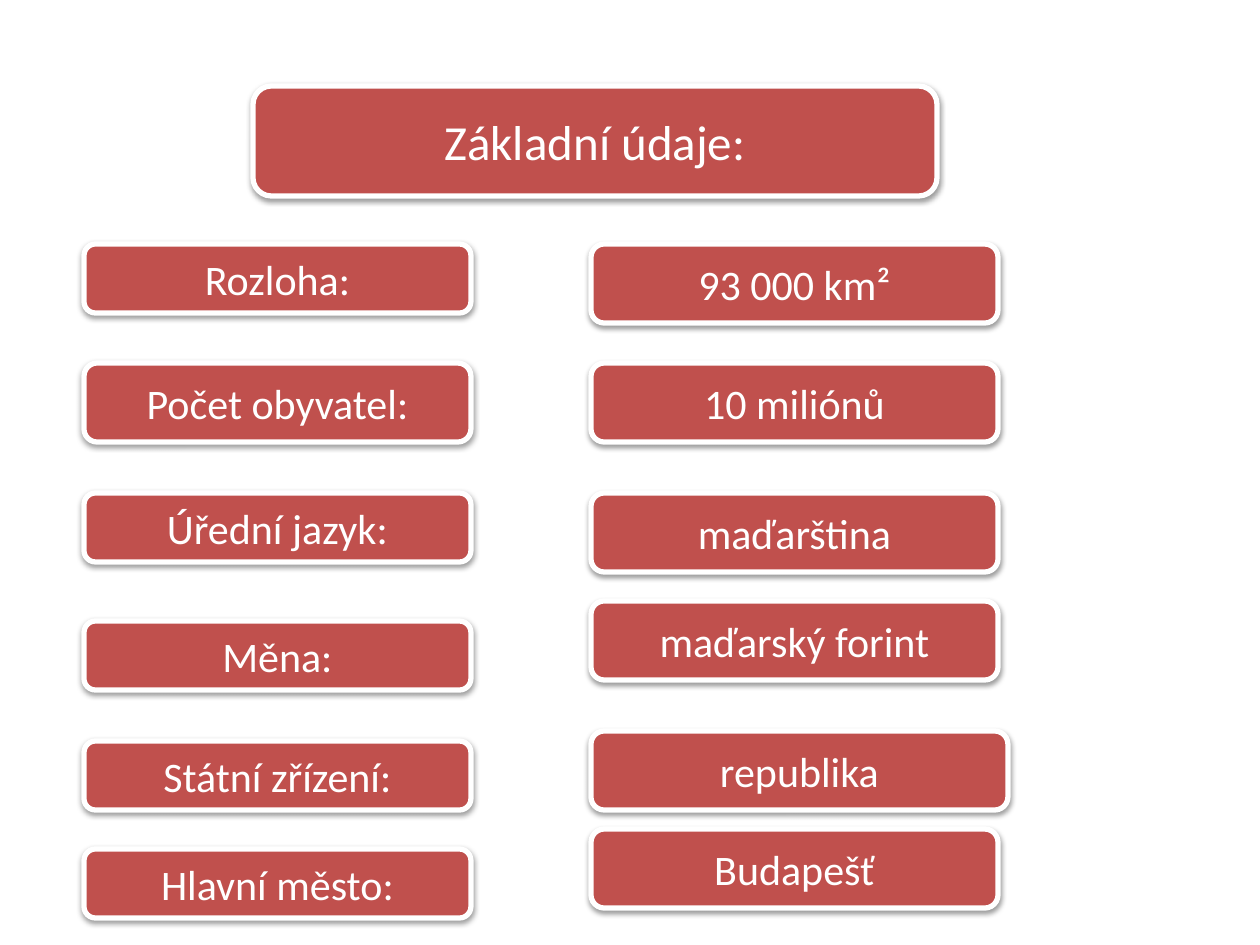
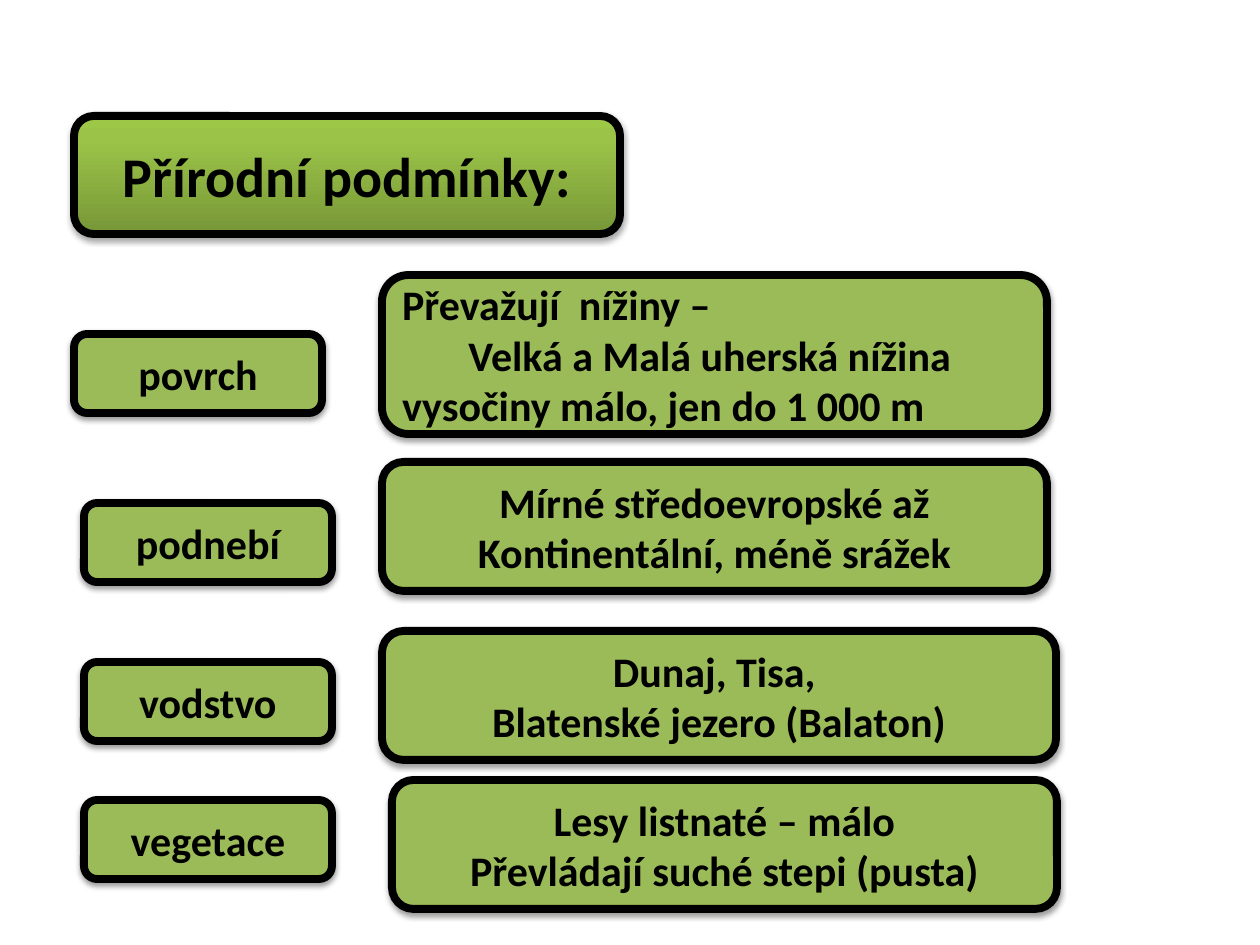
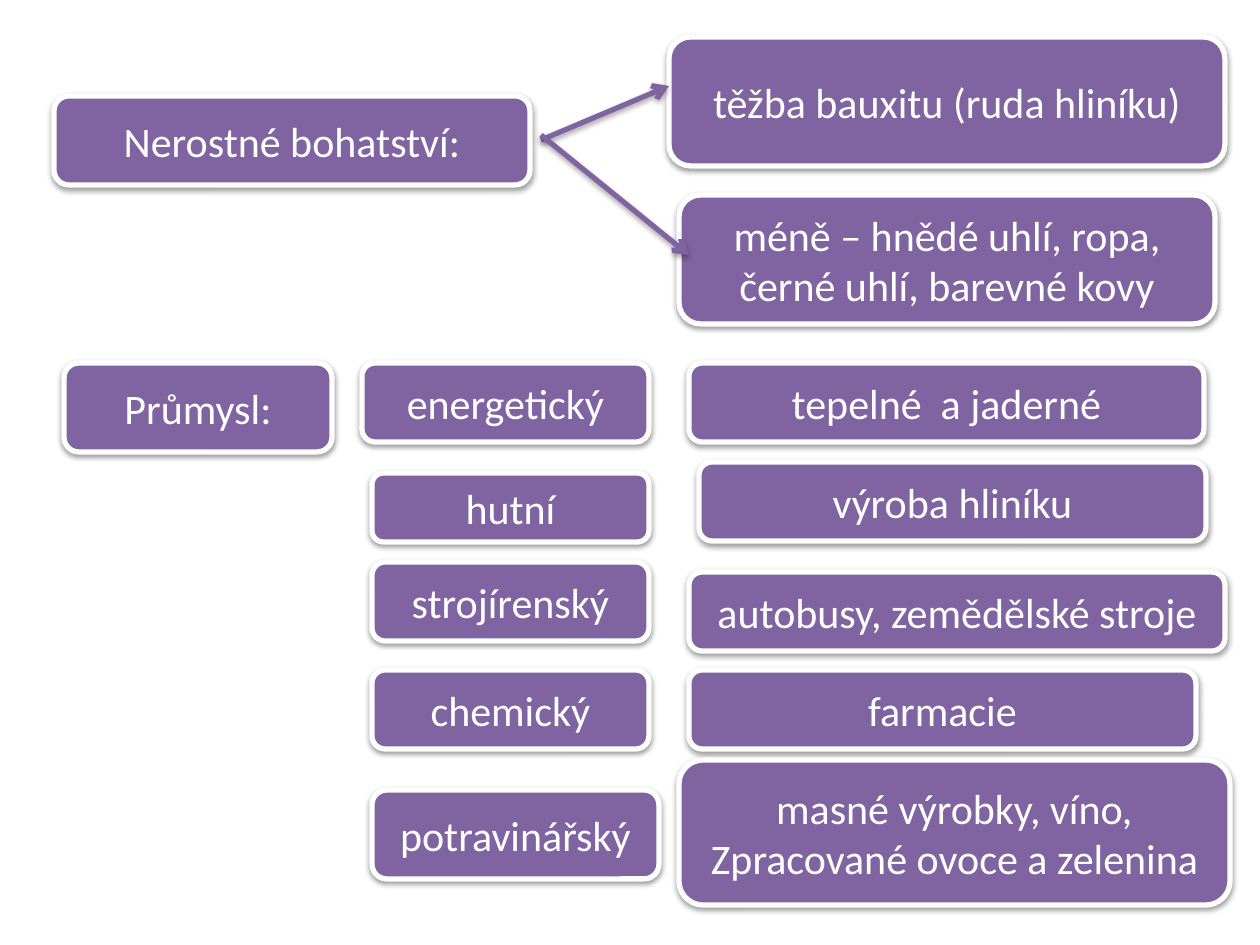
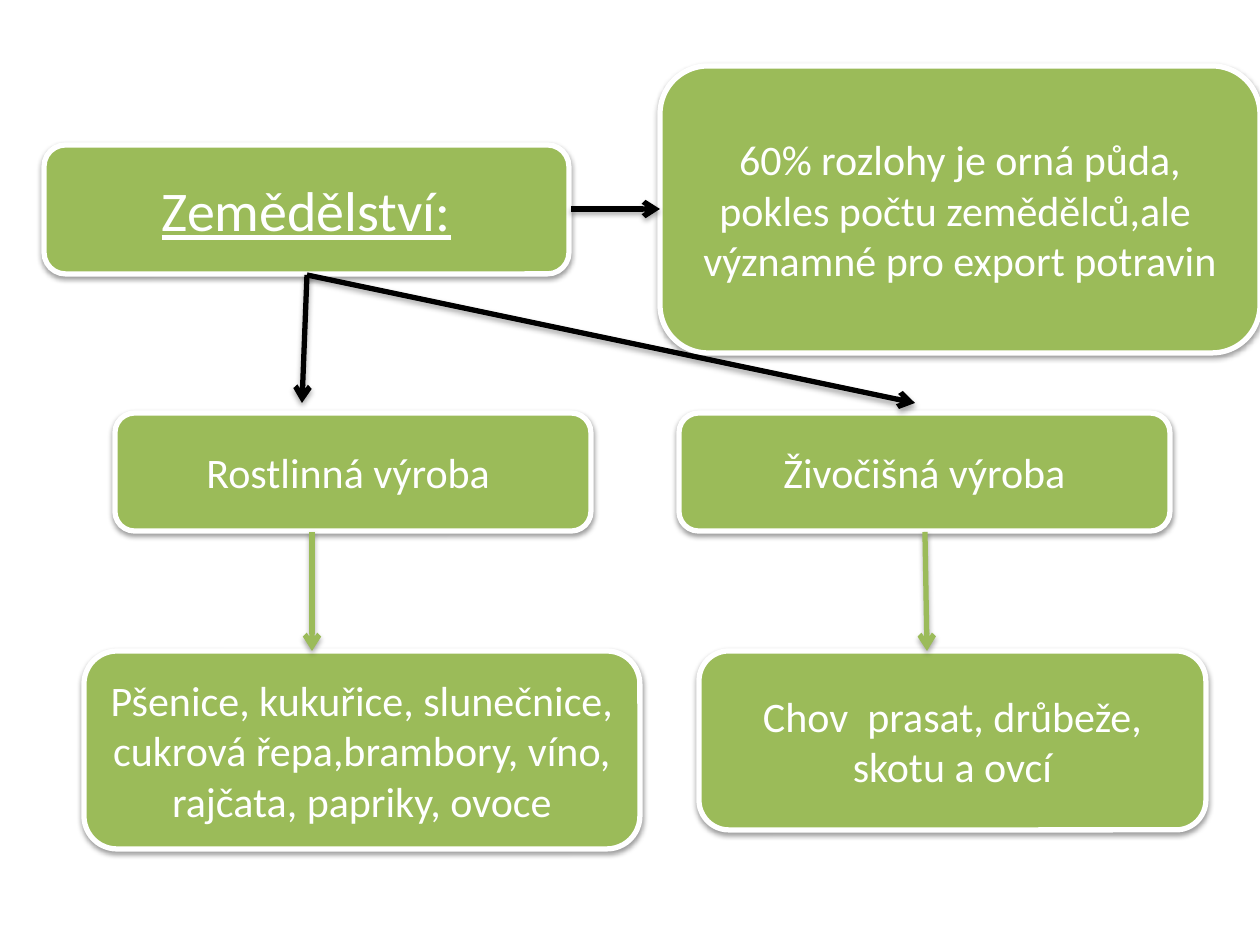
from copy import deepcopy

from lxml.etree import SubElement
from pptx import Presentation
from pptx.dml.color import RGBColor
from pptx.enum.shapes import MSO_CONNECTOR, MSO_SHAPE
from pptx.enum.text import PP_ALIGN
from pptx.oxml.ns import qn
from pptx.util import Emu, Pt

PX_PER_INCH = 126
FONT = "Calibri"
RED, GREEN, PURPLE = "C0504D", "9BBB59", "8064A2"
WHITE, BLACK = "FFFFFF", "000000"
TITLE_GRADIENT = [(0, "779737"), (0.8, "9BC348"), (1, "9DC746")]
BOX_SHADOW = {"dist": 20000, "alpha": 38000}
STRONG_SHADOW = {"dist": 23000, "alpha": 35000}

PLAIN = {"ink": WHITE, "edge": WHITE, "edge_width": 3, "bold": None}
OUTLINED = {"ink": BLACK, "edge": BLACK, "edge_width": 4.5, "bold": True}

# A column holds its usual left, width and height, then its boxes:
# (lines of text, top, what differs from the column).
SLIDES = [
    {
        "fill": RED, "look": PLAIN,
        "columns": [
            (253, 684, 110, [("Základní údaje:", 86, {"size": 28})]),
            (84, 387, 69, [
                ("Rozloha:", 244, {}),
                ("Počet obyvatel:", 363, {"height": 79}),
                ("Úřední jazyk:", 493, {}),
                ("Měna:", 621, {}),
                ("Státní zřízení:", 741, {}),
                ("Hlavní město:", 849, {}),
            ]),
            (591, 407, 79, [
                ("93 000 km²", 244, {}),
                ("10 miliónů", 363, {}),
                ("maďarština", 493, {}),
                ("maďarský forint", 601, {}),
                ("republika", 731, {"width": 417}),
                ("Budapešť", 829, {}),
            ]),
        ],
        "arrows": [],
    },
    {
        "fill": GREEN, "look": OUTLINED,
        "columns": [
            (74, 546, 118, [
                ("Přírodní podmínky:", 116,
                 {"size": 32, "gradient": TITLE_GRADIENT, "shadow": STRONG_SHADOW}),
            ]),
            (84, 248, 79, [
                ("povrch", 334, {"left": 74}),
                ("podnebí", 503, {}),
                ("vodstvo", 662, {}),
                ("vegetace", 800, {}),
            ]),
            (382, 665, 129, [
                ("Převažují  nížiny –\nVelká a Malá uherská nížina \nvysočiny málo, jen do 1 000 m",
                 275, {"height": 159, "left_lines": (0, 2)}),
                ("Mírné středoevropské až\nKontinentální, méně srážek", 462, {}),
                ("Dunaj, Tisa, \nBlatenské jezero (Balaton)", 631, {"width": 674}),
                ("Lesy listnaté – málo\nPřevládají suché stepi (pusta)", 780, {"left": 392}),
            ]),
        ],
        "arrows": [],
    },
    {
        "fill": PURPLE, "look": PLAIN,
        "columns": [
            (54, 476, 89, [
                ("Nerostné bohatství:", 96, {}),
                ("Průmysl:", 363, {"left": 64, "width": 268}),
            ]),
            (669, 556, 129, [
                ("těžba bauxitu (ruda hliníku)", 37, {}),
                (" méně – hnědé uhlí, ropa, \nčerné uhlí, barevné kovy", 195,
                 {"left": 679, "width": 536}),
            ]),
            (372, 277, 79, [
                ("energetický", 363, {"left": 362, "width": 287}),
                ("hutní", 473, {"height": 69}),
                ("strojírenský", 562, {}),
                ("chemický", 670, {}),
                ("potravinářský", 790, {"width": 287, "height": 89}),
            ]),
            (689, 507, 79, [
                ("tepelné  a jaderné", 363, {"width": 515}),
                ("výroba hliníku", 462, {"left": 699}),
                ("autobusy, zemědělské stroje", 572, {"width": 536}),
                ("farmacie", 670, {}),
                ("masné výrobky, víno,\nZpracované ovoce a zelenina", 760,
                 {"left": 679, "width": 551, "height": 145}),
            ]),
        ],
        "arrows": [
            ((541, 140), (669, 86), PURPLE),
            ((541, 135), (689, 255), PURPLE),
        ],
    },
    {
        "fill": GREEN, "look": PLAIN,
        "columns": [
            (44, 525, 129, [("Zemědělství:", 145, {"size": 32, "underline": True})]),
            (660, 600, 287, [
                ("60% rozlohy je orná půda,\npokles počtu zemědělců,ale \nvýznamné pro export potravin",
                 66, {}),
            ]),
            (115, 476, 118, [
                ("Rostlinná výroba ", 413, {}),
                ("Pšenice, kukuřice, slunečnice,\ncukrová řepa,brambory, víno,\nrajčata, papriky, ovoce",
                 651, {"left": 84, "width": 556, "height": 198}),
            ]),
            (679, 491, 118, [
                ("Živočišná výroba", 413, {}),
                ("Chov  prasat, drůbeže, skotu a ovcí", 651,
                 {"left": 699, "width": 507, "height": 179}),
            ]),
        ],
        "arrows": [
            ((312, 532), (312, 651), GREEN),
            ((925, 532), (927, 651), GREEN),
            ((307, 275), (302, 403), BLACK),
            ((307, 275), (915, 403), BLACK),
            ((571, 209), (660, 209), BLACK),
        ],
    },
]


def px(length):
    return Emu(round(length * 914400 / PX_PER_INCH))


def rgb(color):
    return RGBColor.from_string(color)


def add_shadow(effects, dist, alpha):
    shadow = SubElement(effects, qn("a:outerShdw"), blurRad="40000", dist=str(dist),
                        dir="5400000", rotWithShape="0")
    black = SubElement(shadow, qn("a:srgbClr"), val=BLACK)
    SubElement(black, qn("a:alpha"), val=str(alpha))


def fill_gradient(box, gradient):
    """Fill from bottom to top, through three stops."""
    box.fill.gradient()
    box.fill.gradient_angle = 90
    stops = box.element.spPr.find(".//" + qn("a:gsLst"))
    stops.append(deepcopy(stops[-1]))
    for stop, (position, color) in zip(box.fill.gradient_stops, gradient):
        stop.position = position
        stop.color.rgb = rgb(color)


def add_box(slide, text, left, top, width, height, fill, ink, edge, edge_width, bold,
            size=24, underline=None, gradient=None, shadow=BOX_SHADOW, left_lines=()):
    box = slide.shapes.add_shape(MSO_SHAPE.ROUNDED_RECTANGLE,
                                 px(left), px(top), px(width), px(height))
    if gradient:
        fill_gradient(box, gradient)
    else:
        box.fill.solid()
        box.fill.fore_color.rgb = rgb(fill)
    box.line.color.rgb = rgb(edge)
    box.line.width = Pt(edge_width)
    box.shadow.inherit = False
    add_shadow(box.element.spPr.find(qn("a:effectLst")), **shadow)

    frame = box.text_frame
    frame.word_wrap = True
    for index, line in enumerate(text.split("\n")):
        paragraph = frame.add_paragraph() if index else frame.paragraphs[0]
        paragraph.alignment = PP_ALIGN.LEFT if index in left_lines else PP_ALIGN.CENTER
        run = paragraph.add_run()
        run.text = line
        run.font.name = FONT
        run.font.size = Pt(size)
        run.font.bold = bold
        run.font.underline = underline
        run.font.color.rgb = rgb(ink)


def add_arrow(slide, start, end, color):
    arrow = slide.shapes.add_connector(MSO_CONNECTOR.STRAIGHT, *map(px, start + end))
    arrow.line.color.rgb = rgb(color)
    arrow.line.width = Pt(3)
    properties = arrow.element.spPr
    SubElement(properties.find(qn("a:ln")), qn("a:tailEnd"), type="arrow")
    add_shadow(SubElement(properties, qn("a:effectLst")), **STRONG_SHADOW)


def main():
    deck = Presentation()
    deck.slide_width, deck.slide_height = px(1260), px(945)
    for content in SLIDES:
        slide = deck.slides.add_slide(deck.slide_layouts[6])
        for left, width, height, boxes in content["columns"]:
            usual = {"left": left, "width": width, "height": height,
                     "fill": content["fill"], **content["look"]}
            for text, top, changes in boxes:
                add_box(slide, text, top=top, **{**usual, **changes})
        for start, end, color in content["arrows"]:
            add_arrow(slide, start, end, color)
    deck.save("out.pptx")


if __name__ == "__main__":
    main()
